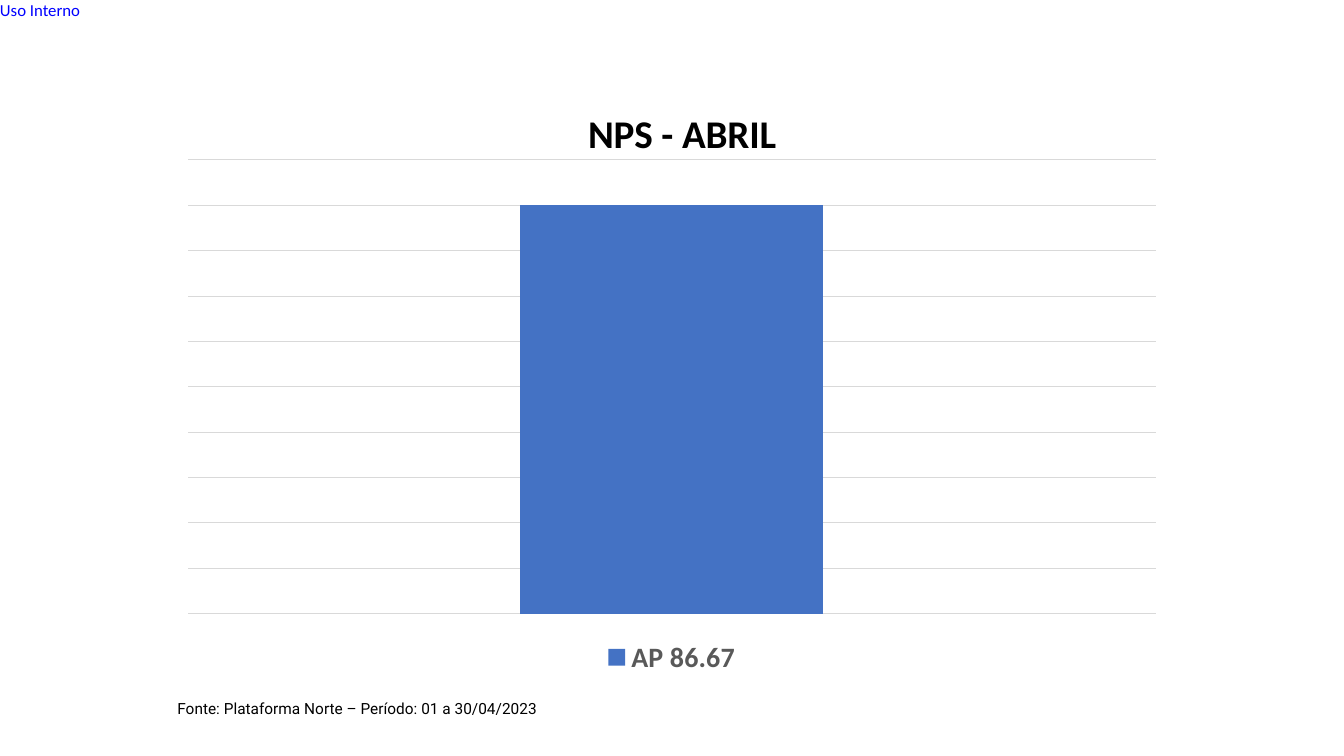
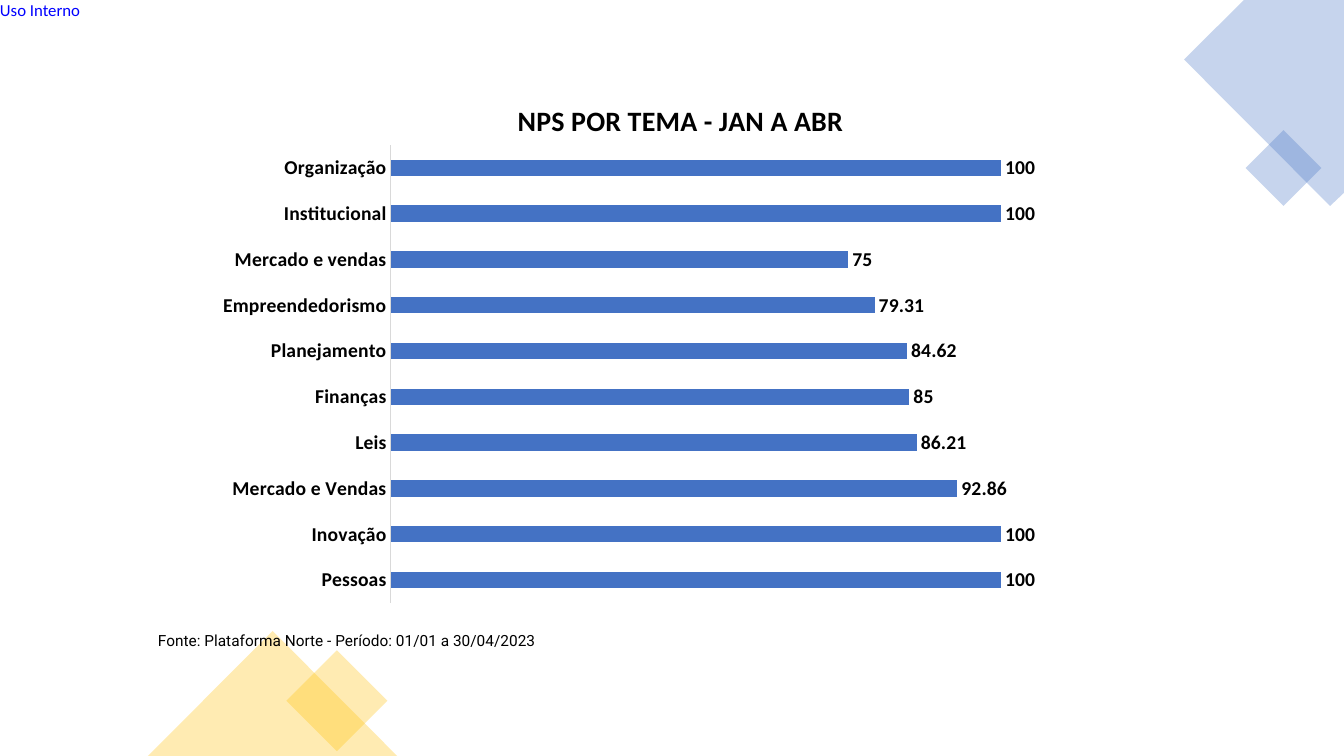
import pptx
import pptx.util
import pptx.chart.data
import pptx.dml.color
import pptx.enum.chart
import pptx.enum.shapes
import pptx.oxml.ns
import lxml.etree

Cm = pptx.util.Cm
Pt = pptx.util.Pt
RGBColor = pptx.dml.color.RGBColor
qn = pptx.oxml.ns.qn
CHART_TYPE = pptx.enum.chart.XL_CHART_TYPE
SHAPE = pptx.enum.shapes.MSO_SHAPE

# Colours
BLACK = RGBColor(0x00, 0x00, 0x00)
BLUE = RGBColor(0x44, 0x72, 0xC4)
GOLD = RGBColor(0xFF, 0xC0, 0x00)
LINK_BLUE = RGBColor(0x00, 0x00, 0xFF)
GREY = RGBColor(0x59, 0x59, 0x59)
LIGHT_GREY = RGBColor(0xD9, 0xD9, 0xD9)

# Text formats
MARKING = {"name": "Calibri", "size": Pt(12), "color": LINK_BLUE}
SOURCE = {"name": "Roboto", "size": Pt(11), "color": BLACK}
CHART_BASE = {"name": "Calibri", "size": Pt(10), "color": BLACK}
CHART_LABEL = {"name": "Calibri", "size": Pt(14), "bold": True, "color": BLACK}
LEGEND = {"name": "Calibri", "size": Pt(20), "bold": True, "color": GREY}
NO_MARGINS = dict.fromkeys(
    ("margin_left", "margin_top", "margin_right", "margin_bottom"), 0)

THEMES = {
    "Pessoas": 100, "Inovação": 100, "Mercado e Vendas": 92.86,
    "Leis": 86.21, "Finanças": 85, "Planejamento": 84.62,
    "Empreendedorismo": 79.31, "Mercado e vendas": 75,
    "Institucional": 100, "Organização": 100,
}


def apply(target, values):
    for name, value in values.items():
        if name == "color":
            target.color.rgb = value
        else:
            setattr(target, name, value)


def add_text(page, text, area, font, frame_values=None):
    box = page.shapes.add_textbox(*map(Cm, area))
    apply(box.text_frame, {"word_wrap": True, **(frame_values or {})})
    span = box.text_frame.paragraphs[0].add_run()
    span.text = text
    apply(span.font, font)


def add_page(deck):
    page = deck.slides.add_slide(deck.slide_layouts[6])
    add_text(page, "Uso Interno", (0, 0, 2.5, 0.51), MARKING, NO_MARGINS)
    return page


# Decorations
def tint(shape, color):
    shape.shadow.inherit = False
    shape.line.fill.background()
    shape.fill.solid()
    shape.fill.fore_color.rgb = color
    fill_color = shape.element.find(".//" + qn("a:srgbClr"))
    lxml.etree.SubElement(fill_color, qn("a:alpha"), val="30000")


def add_decoration(page, kind, area, color, rotation=0):
    shape = page.shapes.add_shape(kind, *map(Cm, area))
    shape.rotation = rotation
    tint(shape, color)


def add_outline(page, points, color):
    start, *others = [(Cm(x), Cm(y)) for x, y in points]
    builder = page.shapes.build_freeform(*start)
    builder.add_line_segments(others, close=True)
    tint(builder.convert_to_shape(), color)


# Charts
def set_layout(parent, index, **values):
    """Place a chart part by fractions of the chart area."""
    for old in parent.findall(qn("c:layout")):
        parent.remove(old)
    layout = lxml.etree.SubElement(parent, qn("c:layout"))
    manual = lxml.etree.SubElement(layout, qn("c:manualLayout"))
    for name, value in values.items():
        lxml.etree.SubElement(manual, qn("c:" + name), val=str(value))
    parent.insert(index, layout)


def add_chart(page, kind, area, title, title_size, title_place, plot_area,
              series_name, values, gap, axis_values):
    data = pptx.chart.data.CategoryChartData()
    data.categories = list(values)
    data.add_series(series_name, list(values.values()))
    chart = page.shapes.add_chart(kind, *map(Cm, area), data).chart
    apply(chart.font, CHART_BASE)
    chart.has_legend = False

    span = chart.chart_title.text_frame.paragraphs[0].add_run()
    span.text = title
    apply(span.font, {**CHART_LABEL, "size": Pt(title_size)})
    left, top = title_place
    set_layout(chart.element.find(".//" + qn("c:title")), 1,
               xMode="edge", yMode="edge", x=left, y=top)
    left, top, width, height = plot_area
    set_layout(chart.element.find(".//" + qn("c:plotArea")), 0,
               layoutTarget="inner", xMode="edge", yMode="edge",
               x=left, y=top, w=width, h=height)

    plot = chart.plots[0]
    apply(plot, {"gap_width": gap, "vary_by_categories": False})
    fill = plot.series[0].format.fill
    fill.solid()
    fill.fore_color.rgb = BLUE
    apply(chart.value_axis, {"visible": False, "has_major_gridlines": False,
                             **axis_values})
    return chart


def draw_line(line):
    apply(line, {"color": LIGHT_GREY, "width": Pt(0.75)})


# Slides
def build_month(deck):
    page = add_page(deck)
    add_text(page, "Fonte: Plataforma Norte – Período: 01 a 30/04/2023",
             (4.22, 17.48, 16.26, 0.73), SOURCE)
    chart = add_chart(
        page, CHART_TYPE.COLUMN_CLUSTERED, (4.22, 1.9, 25.42, 15.24),
        "NPS - ABRIL", 28, (0.41, 0.04), (0.02, 0.14, 0.96, 0.75),
        "AP 86.67", {"1": 100}, 219,
        {"minimum_scale": 10, "maximum_scale": 110, "major_unit": 10,
         "has_major_gridlines": True})
    chart.plots[0].overlap = -27
    chart.category_axis.visible = False
    draw_line(chart.value_axis.major_gridlines.format.line)
    chart.has_legend = True
    apply(chart.legend, {
        "position": pptx.enum.chart.XL_LEGEND_POSITION.BOTTOM,
        "include_in_layout": False})
    apply(chart.legend.font, LEGEND)


def build_themes(deck):
    page = add_page(deck)
    add_outline(page, [(33.87, 0), (31.35, 0), (29.84, 1.5),
                       (33.52, 5.19), (33.87, 4.86)], BLUE)
    add_decoration(page, SHAPE.RECTANGLE, (31.67, 3.56, 1.35, 1.35), BLUE, 45)
    add_decoration(page, SHAPE.RECTANGLE, (7.59, 16.76, 1.8, 1.8), GOLD, 45)
    add_decoration(page, SHAPE.ISOSCELES_TRIANGLE,
                   (3.73, 15.9, 6.28, 3.15), GOLD)
    add_text(page, "Fonte: Plataforma Norte - Período: 01/01 a 30/04/2023",
             (3.73, 15.77, 11.46, 0.73), SOURCE)
    chart = add_chart(
        page, CHART_TYPE.BAR_CLUSTERED, (5.11, 1.73, 23.67, 13.74),
        "NPS POR TEMA - JAN A ABR", 20, (0.33, 0.05),
        (0.2, 0.14, 0.78, 0.84), "Series 1", THEMES, 182,
        {"minimum_scale": 0, "maximum_scale": 120})
    axis = chart.category_axis
    axis.major_tick_mark = pptx.enum.chart.XL_TICK_MARK.NONE
    apply(axis.tick_labels.font, CHART_LABEL)
    draw_line(axis.format.line)
    labels = chart.plots[0].series[0].data_labels
    apply(labels, {
        "show_value": True,
        "position": pptx.enum.chart.XL_LABEL_POSITION.OUTSIDE_END})
    apply(labels.font, CHART_LABEL)


def main():
    deck = pptx.Presentation()
    apply(deck, {"slide_width": Cm(33.87), "slide_height": Cm(19.05)})
    build_month(deck)
    build_themes(deck)
    deck.save("out.pptx")


if __name__ == "__main__":
    main()
